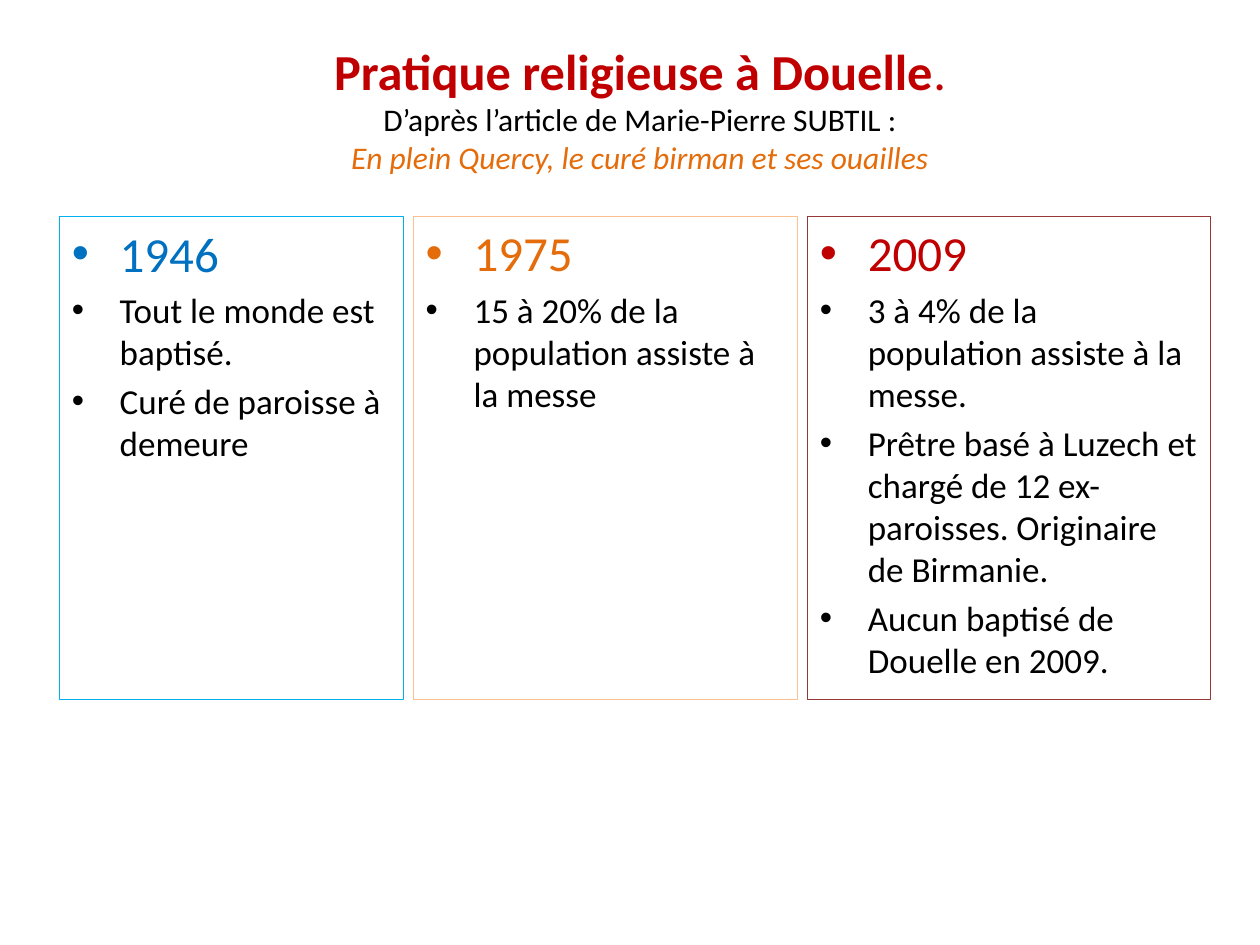
from dataclasses import dataclass

from lxml.etree import SubElement
from pptx import Presentation
from pptx.dml.color import RGBColor
from pptx.enum.text import MSO_ANCHOR, MSO_AUTO_SIZE, PP_ALIGN
from pptx.oxml.ns import qn
from pptx.util import Inches, Pt


@dataclass(frozen=True)
class Theme:
    font: str = "Calibri"
    black: str = "000000"
    red: str = "C00000"
    orange: str = "E46C0A"
    blue: str = "0070C0"
    blue_line: str = "00B0F0"
    orange_line: str = "FAC090"
    red_line: str = "953735"
    title: float = 28.8
    subtitle: float = 18
    year: float = 28
    item: float = 20


theme = Theme()


def add_text(p, text, size, color=theme.black, bold=False, italic=False):
    r = p.add_run()
    r.text = text
    r.font.name = theme.font
    r.font.size = Pt(size)
    r.font.color.rgb = RGBColor.from_string(color)
    r.font.bold = bold
    r.font.italic = italic


def add_break(p, size):
    """Break the line, giving the break the type size of its line."""
    p.add_line_break()
    SubElement(p._p[-1], qn("a:rPr"), sz=str(round(size * 100)))


prs = Presentation()
prs.slide_width, prs.slide_height = Inches(10), Inches(7.5)
s = prs.slides.add_slide(prs.slide_layouts[1])

title = s.shapes.title
title.left, title.top = Inches(2.5), Inches(0.31)
title.width, title.height = Inches(5.16), Inches(1.09)
tf = title.text_frame
tf.auto_size = MSO_AUTO_SIZE.NONE
tf.vertical_anchor = MSO_ANCHOR.MIDDLE
p = tf.paragraphs[0]
p.alignment = PP_ALIGN.CENTER
add_text(p, "Pratique religieuse à Douelle", theme.title, theme.red, bold=True)
add_text(p, ".", theme.title, theme.red)
add_break(p, theme.title)
add_text(p, "D’après l’article de Marie-Pierre SUBTIL :", theme.subtitle)
add_break(p, theme.subtitle)
add_text(p, "En plein Quercy, le curé birman et ses ouailles", theme.subtitle,
         theme.orange, italic=True)

# Year, column width, year colour, border colour, items
columns = [
    ("1946", 2.73, theme.blue, theme.blue_line,
     ["Tout le monde est baptisé.", "Curé de paroisse à demeure"]),
    ("1975", 3.05, theme.orange, theme.orange_line,
     ["15 à 20% de la population assiste à la messe"]),
    ("2009", 3.2, theme.red, theme.red_line,
     ["3 à 4% de la population assiste à la messe.",
      "Prêtre basé à Luzech et chargé de 12 ex-paroisses. Originaire de Birmanie.",
      "Aucun baptisé de Douelle en 2009."]),
]
left, top, height, gap = 0.47, 1.72, 3.83, 0.08
indent = Inches(0.38)

for i, (year, width, color, border, items) in enumerate(columns):
    box = s.placeholders[1] if i == 0 else s.shapes.add_textbox(0, 0, 0, 0)
    box.left, box.top = Inches(left), Inches(top)
    box.width, box.height = Inches(width), Inches(height)
    box.line.color.rgb = RGBColor.from_string(border)
    box.line.width = Pt(0.75)
    tf = box.text_frame
    tf.word_wrap = True
    tf.auto_size = MSO_AUTO_SIZE.NONE
    tf.vertical_anchor = MSO_ANCHOR.TOP

    lines = [(year, theme.year, color)]
    lines += [(item, theme.item, theme.black) for item in items]
    for n, (text, size, text_color) in enumerate(lines):
        p = tf.paragraphs[0] if n == 0 else tf.add_paragraph()
        p.space_before = Pt(size * 0.2)
        pPr = p._p.get_or_add_pPr()
        pPr.set("marL", str(indent))
        pPr.set("indent", str(-indent))
        SubElement(pPr, qn("a:buFont"), typeface="Arial")
        SubElement(pPr, qn("a:buChar"), char="•")
        add_text(p, text, size, text_color)
    left += width + gap

prs.save("out.pptx")
